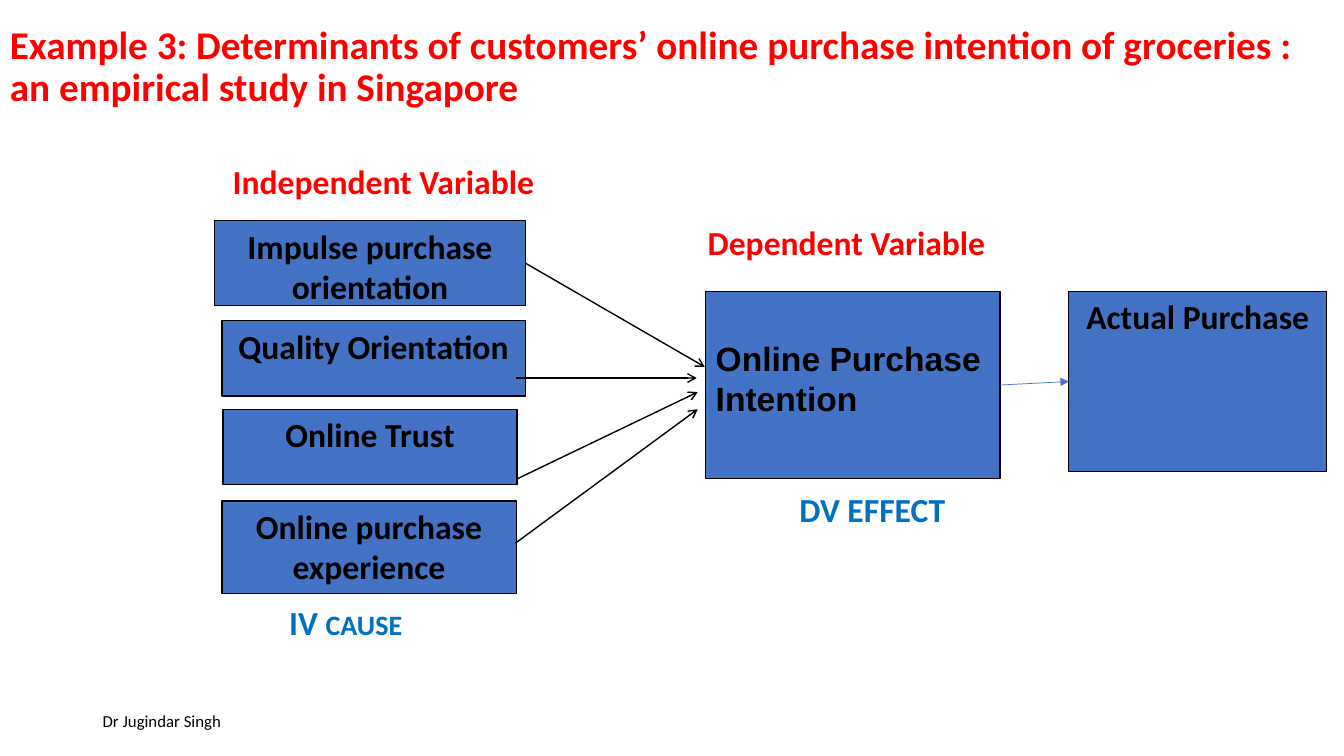
"""Build a slide showing what determines the intention to buy groceries online."""
from lxml import etree
from pptx import Presentation
from pptx.dml.color import RGBColor
from pptx.enum.shapes import MSO_CONNECTOR, MSO_SHAPE
from pptx.enum.text import MSO_ANCHOR, PP_ALIGN
from pptx.oxml.ns import qn
from pptx.util import Pt

PX = 9144
RECTANGLE = MSO_SHAPE.RECTANGLE
STRAIGHT = MSO_CONNECTOR.STRAIGHT
TOP, MIDDLE = MSO_ANCHOR.TOP, MSO_ANCHOR.MIDDLE
LEFT, CENTER = PP_ALIGN.LEFT, PP_ALIGN.CENTER
RIGHT_SIDE, LEFT_SIDE = 3, 1

THEME = {
    "red": RGBColor(255, 0, 0),
    "blue": RGBColor(0, 112, 192),
    "box": RGBColor(68, 114, 196),
    "black": RGBColor(0, 0, 0),
    "title": 28,
    "body": 24,
    "small": 20,
    "footer": 12,
    "font": "Calibri",
    "box_font": "Arial",
}


def write(shape, text, size, color, anchor=TOP, align=LEFT, font="font", bold=True):
    frame = shape.text_frame
    frame.text = text
    frame.word_wrap = True
    frame.vertical_anchor = anchor
    paragraph = frame.paragraphs[0]
    paragraph.alignment = align
    for run in paragraph.runs:
        run.font.name = THEME[font]
        run.font.size = Pt(THEME[size])
        run.font.bold = bold
        run.font.color.rgb = THEME[color]
    return paragraph


def draw_arrow(start, end, color="black", width=1, head="arrow"):
    arrow = slide.shapes.add_connector(STRAIGHT, *(value * PX for value in start + end))
    arrow.line.color.rgb = THEME[color]
    arrow.line.width = Pt(width)
    etree.SubElement(arrow.line._get_or_add_ln(), qn("a:tailEnd"), type=head)
    etree.SubElement(arrow._element.spPr, qn("a:effectLst"))
    return arrow


presentation = Presentation()
presentation.slide_width = 1333 * PX
presentation.slide_height = 750 * PX
slide = presentation.slides.add_slide(presentation.slide_layouts[6])

title_text = (
    "Example 3: Determinants of customers’ online purchase intention of groceries :"
    "\van empirical study in Singapore"
)
labels = [
    (title_text, (0, 0, 1333, 134), "title", "red", MIDDLE, True),
    ("Independent Variable", (221, 155, 331, 50), "body", "red", TOP, True),
    ("Dependent Variable", (692, 215, 308, 50), "body", "red", TOP, True),
    ("IV ", (277, 592, 133, 50), "body", "blue", TOP, True),
    ("DV EFFECT", (783, 480, 166, 50), "body", "blue", TOP, True),
    ("Dr Jugindar Singh", (92, 695, 300, 40), "footer", "black", MIDDLE, False),
]
paragraphs = {}
for text, bounds, size, color, anchor, bold in labels:
    label = slide.shapes.add_textbox(*(value * PX for value in bounds))
    paragraphs[text] = write(label, text, size, color, anchor, bold=bold)
paragraphs[title_text].line_spacing = 0.9

cause = paragraphs["IV "].add_run()
cause.text = "CAUSE"
cause.font.name = THEME["font"]
cause.font.size = Pt(THEME["small"])
cause.font.bold = True
cause.font.color.rgb = THEME["blue"]

variables = [
    ("Impulse purchase orientation", (213, 219, 308, 84), TOP, CENTER, "font"),
    ("Quality Orientation", (220, 318, 301, 75), TOP, CENTER, "font"),
    ("Online Trust", (221, 406, 292, 75), TOP, CENTER, "font"),
    ("Online purchase experience", (220, 497, 292, 92), TOP, CENTER, "font"),
    ("Online Purchase Intention", (700, 289, 292, 186), MIDDLE, LEFT, "box_font"),
    ("Actual Purchase", (1060, 289, 256, 179), TOP, CENTER, "font"),
]
boxes = {}
for text, bounds, anchor, align, font in variables:
    box = slide.shapes.add_shape(RECTANGLE, *(value * PX for value in bounds))
    box.shadow.inherit = False
    box.fill.solid()
    box.fill.fore_color.rgb = THEME["box"]
    box.line.color.rgb = THEME["black"]
    box.line.width = Pt(1)
    write(box, text, "body", "black", anchor, align, font)
    boxes[text] = box
intention = boxes["Online Purchase Intention"]
intention.text_frame.margin_bottom = 19 * PX

impulse_arrow = draw_arrow((521, 261), (699, 364))
impulse_arrow.begin_connect(boxes["Impulse purchase orientation"], RIGHT_SIDE)
for start, end in [
    ((512, 375), (691, 375)),
    ((513, 475), (692, 389)),
    ((511, 539), (692, 406)),
]:
    draw_arrow(start, end)

purchase_arrow = draw_arrow((992, 382), (1060, 379), "box", 0.5, "triangle")
purchase_arrow.begin_connect(intention, RIGHT_SIDE)
purchase_arrow.end_connect(boxes["Actual Purchase"], LEFT_SIDE)

presentation.save("out.pptx")
